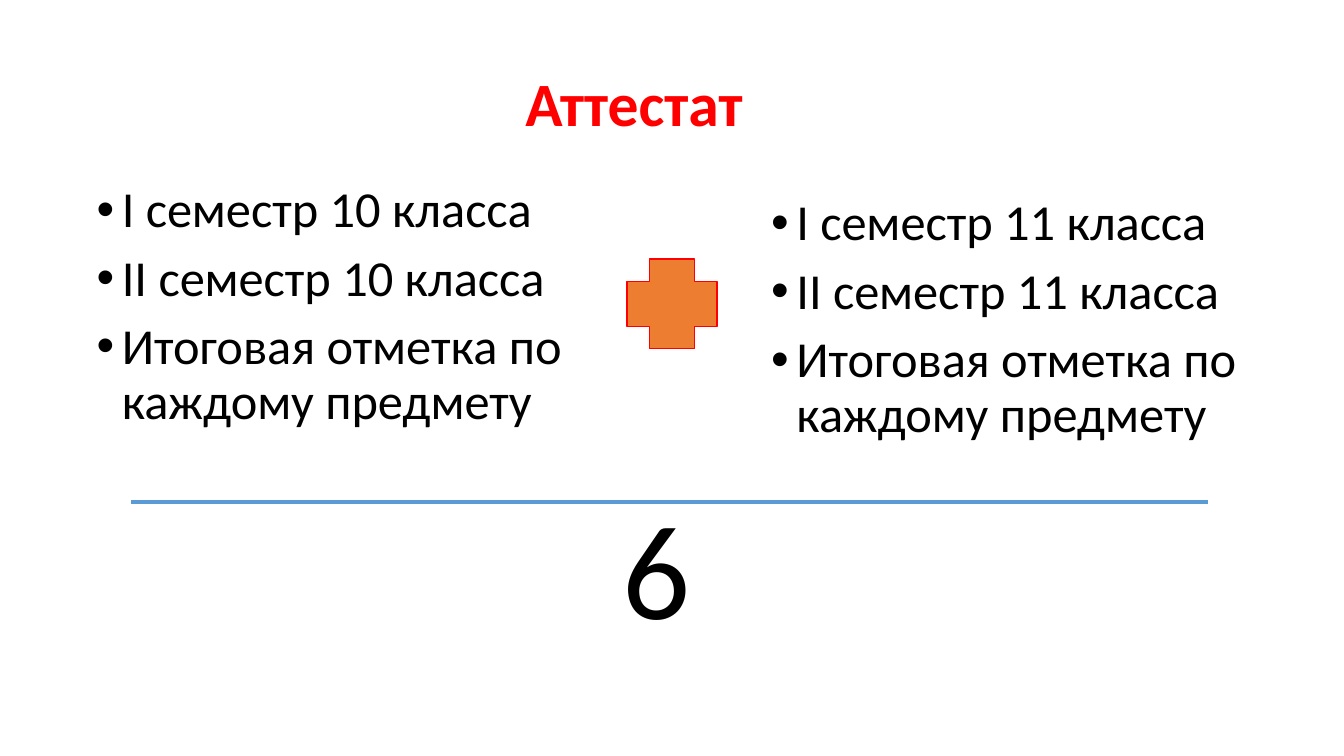
"""Build the slide on how the school certificate is made up."""
from dataclasses import dataclass

from lxml import etree
from pptx import Presentation
from pptx.dml.color import RGBColor
from pptx.enum.shapes import MSO_CONNECTOR, MSO_SHAPE
from pptx.enum.text import MSO_ANCHOR, MSO_AUTO_SIZE, PP_ALIGN
from pptx.oxml.ns import qn
from pptx.util import Emu, Pt

LINE = MSO_CONNECTOR.STRAIGHT
PLUS = MSO_SHAPE.CROSS
TOP, MID = MSO_ANCHOR.TOP, MSO_ANCHOR.MIDDLE
LEFT, CENTER = PP_ALIGN.LEFT, PP_ALIGN.CENTER
FIXED, GROW = MSO_AUTO_SIZE.NONE, MSO_AUTO_SIZE.SHAPE_TO_FIT_TEXT


@dataclass(frozen=True)
class Theme:
    font: str = "Calibri"
    ink: str = "000000"
    red: str = "FF0000"
    fill: str = "ED7D31"
    rule: str = "5B9BD5"
    title: int = 44
    body: int = 36
    total: int = 96


@dataclass(frozen=True)
class Box:
    x: int
    y: int
    w: int
    h: int


@dataclass(frozen=True)
class Column:
    box: Box
    grade: int


THEME = Theme()
COLUMNS = (
    Column(Box(86, 178, 502, 281), 10),
    Column(Box(755, 191, 502, 307), 11),
)


def px(n: int) -> Emu:
    """Turn px, 100 to the inch, into EMU."""
    return Emu(n * 9144)


def place(box: Box) -> tuple[Emu, Emu, Emu, Emu]:
    """Give the four lengths of a box in EMU."""
    return px(box.x), px(box.y), px(box.w), px(box.h)


def color(code: str) -> RGBColor:
    """Read a colour code."""
    return RGBColor.from_string(code)


def add_text(slide, box: Box, *lines: str, size: int, ink: str = THEME.ink,
             bold: bool = False, align: PP_ALIGN = LEFT,
             anchor: MSO_ANCHOR = TOP, fit: MSO_AUTO_SIZE = FIXED,
             pitch: float = 1.0, gap: int = 0, bullet: bool = False) -> None:
    """Add a text box with one paragraph per line."""
    frame = slide.shapes.add_textbox(*place(box)).text_frame
    frame.word_wrap = True
    frame.auto_size = fit
    frame.vertical_anchor = anchor
    frame.text = "\n".join(lines)
    for para in frame.paragraphs:
        para.alignment = align
        para.line_spacing = pitch
        para.space_before = Pt(gap)
        font = para.runs[0].font
        font.name, font.size, font.bold = THEME.font, Pt(size), bold
        font.color.rgb = color(ink)
        if bullet:
            props = para._p.get_or_add_pPr()
            props.set("marL", str(px(25)))
            props.set("indent", str(px(-25)))
            etree.SubElement(props, qn("a:buFont")).set("typeface", "Arial")
            etree.SubElement(props, qn("a:buChar")).set("char", "•")


def add_plus(slide, box: Box) -> None:
    """Add the plus sign between the columns."""
    plus = slide.shapes.add_shape(PLUS, *place(box))
    plus.shadow.inherit = False
    plus.fill.solid()
    plus.fill.fore_color.rgb = color(THEME.fill)
    plus.line.color.rgb = color(THEME.red)
    plus.line.width = Pt(1)


def add_rule(slide, left: int, right: int, y: int) -> None:
    """Add the rule above the total."""
    rule = slide.shapes.add_connector(LINE, px(left), px(y), px(right), px(y))
    rule.line.color.rgb = color(THEME.rule)
    rule.line.width = Pt(3)
    etree.SubElement(rule._element.spPr, qn("a:effectLst"))


def main() -> None:
    """Draw and save the slide."""
    deck = Presentation()
    deck.slide_width, deck.slide_height = px(1333), px(750)
    slide = deck.slides.add_slide(deck.slide_layouts[6])
    add_text(slide, Box(61, 33, 1150, 145), "Аттестат ", size=THEME.title,
             ink=THEME.red, bold=True, align=CENTER, anchor=MID, pitch=0.9)
    for col in COLUMNS:
        add_text(slide, col.box, f"I семестр {col.grade} класса",
                 f"II семестр {col.grade} класса",
                 "Итоговая отметка по каждому предмету",
                 size=THEME.body, pitch=0.9, gap=10, bullet=True)
    add_plus(slide, Box(622, 257, 89, 89))
    add_rule(slide, 130, 1198, 498)
    add_text(slide, Box(608, 476, 118, 172), "6", size=THEME.total, fit=GROW)
    deck.save("out.pptx")


if __name__ == "__main__":
    main()
